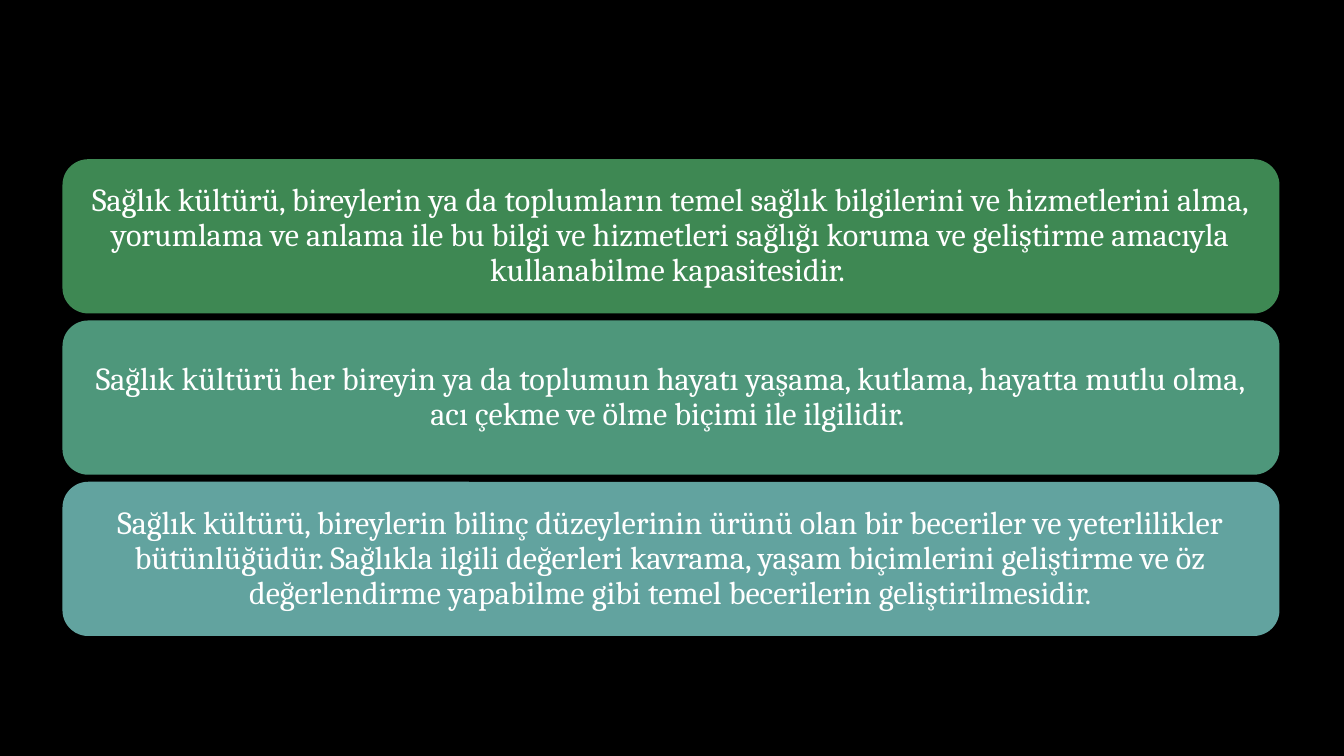
"""Build a slide with three stacked cards defining health culture."""
from pptx import Presentation
from pptx.dml.color import RGBColor
from pptx.enum.shapes import MSO_SHAPE
from pptx.enum.text import MSO_ANCHOR, PP_ALIGN
from pptx.util import Inches, Pt

ROUND = MSO_SHAPE.ROUNDED_RECTANGLE
MIDDLE = MSO_ANCHOR.MIDDLE
CENTER = PP_ALIGN.CENTER

BLACK = RGBColor(0x00, 0x00, 0x00)
WHITE = RGBColor(0xFF, 0xFF, 0xFF)
GREEN = RGBColor(0x3E, 0x88, 0x53)
JADE = RGBColor(0x4E, 0x97, 0x7B)
TEAL = RGBColor(0x62, 0xA3, 0x9F)

LEFT, TOP = Inches(0.62), Inches(1.58)
WIDTH, HEIGHT = Inches(12.07), Inches(1.53)
PITCH = HEIGHT + Inches(0.07)
INSET = Inches(0.1)

CARDS = [
    (GREEN, "Sağlık kültürü, bireylerin ya da toplumların temel sağlık "
            "bilgilerini ve hizmetlerini alma, yorumlama ve anlama ile bu "
            "bilgi ve hizmetleri sağlığı koruma ve geliştirme amacıyla "
            "kullanabilme kapasitesidir. "),
    (JADE, "Sağlık kültürü her bireyin ya da toplumun hayatı yaşama, "
           "kutlama, hayatta mutlu olma, acı çekme ve ölme biçimi ile "
           "ilgilidir. "),
    (TEAL, "Sağlık kültürü, bireylerin bilinç düzeylerinin ürünü olan bir "
           "beceriler ve yeterlilikler bütünlüğüdür. Sağlıkla ilgili "
           "değerleri kavrama, yaşam biçimlerini geliştirme ve öz "
           "değerlendirme yapabilme gibi temel becerilerin "
           "geliştirilmesidir."),
]

deck = Presentation()
deck.slide_width, deck.slide_height = Inches(13.33), Inches(7.5)
slide = deck.slides.add_slide(deck.slide_layouts[6])
slide.background.fill.solid()
slide.background.fill.fore_color.rgb = BLACK

for row, (color, words) in enumerate(CARDS):
    card = slide.shapes.add_shape(ROUND, LEFT, TOP + row * PITCH, WIDTH, HEIGHT)
    card.shadow.inherit = False
    card.fill.solid()
    card.fill.fore_color.rgb = color
    card.line.fill.background()

    frame = card.text_frame
    frame.word_wrap = True
    frame.vertical_anchor = MIDDLE
    frame.margin_left = frame.margin_right = INSET
    frame.margin_top = frame.margin_bottom = INSET

    para = frame.paragraphs[0]
    para.alignment = CENTER
    para.line_spacing = 0.9
    run = para.add_run()
    run.text = words
    run.font.name = "Cambria"
    run.font.size = Pt(23)
    run.font.color.rgb = WHITE

deck.save("out.pptx")
